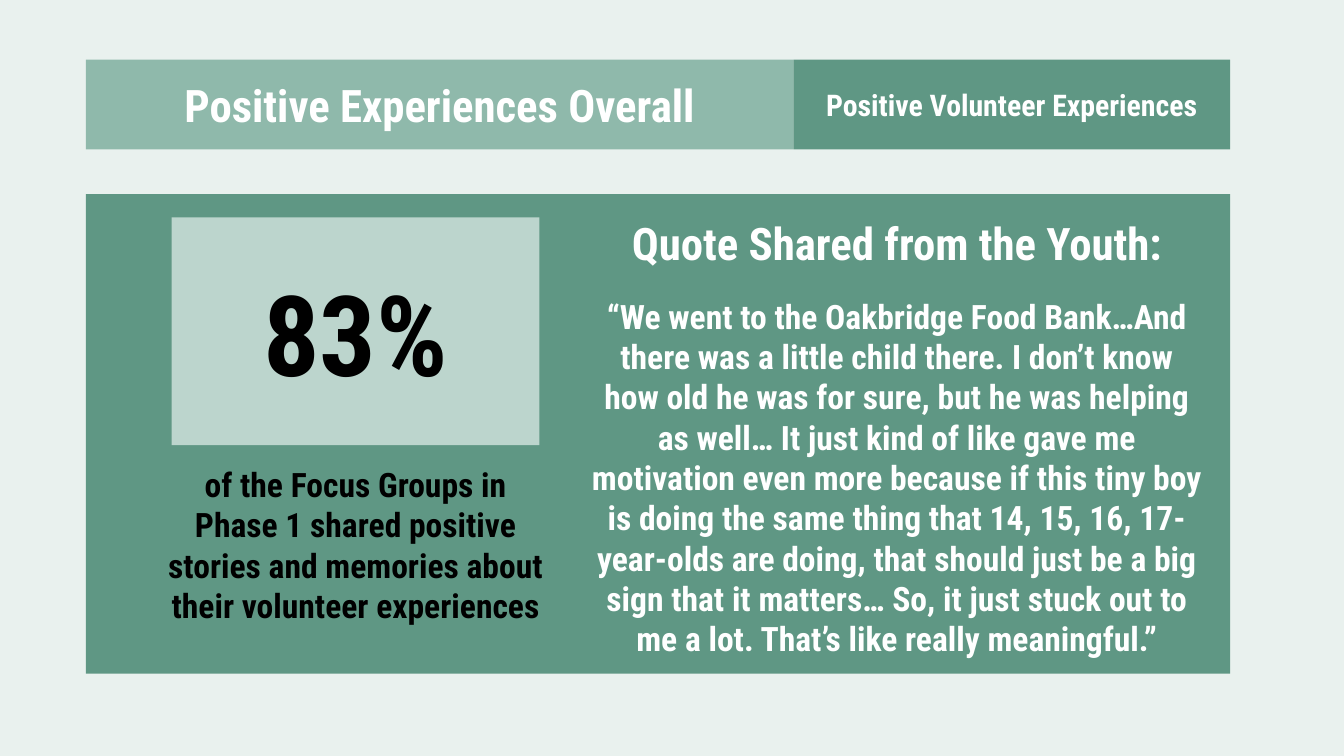
from pptx import Presentation
from pptx.dml.color import RGBColor
from pptx.enum import shapes, text
from pptx.util import Pt

FONT = "Roboto Condensed"
WHITE = RGBColor(0xFF, 0xFF, 0xFF)
BLACK = RGBColor(0x00, 0x00, 0x00)
MIST = RGBColor(0xE9, 0xF1, 0xEE)
PALE = RGBColor(0xBC, 0xD5, 0xCD)
SAGE = RGBColor(0x8F, 0xB9, 0xAB)
GREEN = RGBColor(0x5F, 0x97, 0x84)

WIDTH, HEIGHT = 720, 405
LEFT, SPLIT, RIGHT = 46, 425, 659
HEADER_TOP, HEADER_HEIGHT = 32, 48

QUOTE = (
    "“We went to the Oakbridge Food Bank…And there was a little child there. "
    "I don’t know how old he was for sure, but he was helping as well… It just "
    "kind of like gave me motivation even more because if this tiny boy is doing "
    "the same thing that 14, 15, 16, 17-year-olds are doing, that should just be "
    "a big sign that it matters… So, it just stuck out to me a lot. That’s like "
    "really meaningful.”"
)
CAPTION = (
    "of the Focus Groups in Phase 1 shared positive stories and memories "
    "about their volunteer experiences"
)


def write(paragraph, words, size, color):
    paragraph.alignment = text.PP_ALIGN.CENTER
    run = paragraph.add_run()
    run.text = words
    run.font.name = FONT
    run.font.size = Pt(size)
    run.font.bold = True
    run.font.color.rgb = color


def add_panel(slide, left, top, width, height, fill):
    panel = slide.shapes.add_shape(
        shapes.MSO_SHAPE.RECTANGLE, Pt(left), Pt(top), Pt(width), Pt(height))
    panel.shadow.inherit = False
    panel.fill.solid()
    panel.fill.fore_color.rgb = fill
    panel.line.fill.background()
    return panel


def add_label(panel, words, size, color):
    frame = panel.text_frame
    frame.word_wrap = True
    frame.vertical_anchor = text.MSO_ANCHOR.MIDDLE
    write(frame.paragraphs[0], words, size, color)


def add_textbox(slide, left, top, width, height):
    frame = slide.shapes.add_textbox(
        Pt(left), Pt(top), Pt(width), Pt(height)).text_frame
    frame.word_wrap = True
    return frame


def main():
    prs = Presentation()
    prs.slide_width, prs.slide_height = Pt(WIDTH), Pt(HEIGHT)
    slide = prs.slides.add_slide(prs.slide_layouts[6])

    # Backdrop
    add_panel(slide, 0, 0, WIDTH, HEIGHT, MIST)

    # Header band
    title = add_panel(slide, LEFT, HEADER_TOP, SPLIT - LEFT, HEADER_HEIGHT, SAGE)
    add_label(title, "Positive Experiences Overall", 24, WHITE)
    topic = add_panel(slide, SPLIT, HEADER_TOP, RIGHT - SPLIT, HEADER_HEIGHT, GREEN)
    add_label(topic, "Positive Volunteer Experiences", 16, WHITE)

    # Content panel with the quote
    add_panel(slide, LEFT, 104, RIGHT - LEFT, 257, GREEN)
    quote = add_textbox(slide, 309, 112, 343, 262)
    write(quote.paragraphs[0], "Quote Shared from the Youth:", 24, WHITE)
    body = quote.add_paragraph()
    body.space_before = Pt(14)
    write(body, QUOTE, 18, WHITE)

    # Key figure and its caption
    figure = add_panel(slide, 92, 116.5, 197, 122, PALE)
    add_label(figure, "83%", 60, BLACK)
    caption = add_textbox(slide, 78.5, 209, 224, 126)
    caption.margin_top = Pt(39.5)
    caption.margin_bottom = 0
    write(caption.paragraphs[0], CAPTION, 18, BLACK)

    prs.save("out.pptx")


if __name__ == "__main__":
    main()
